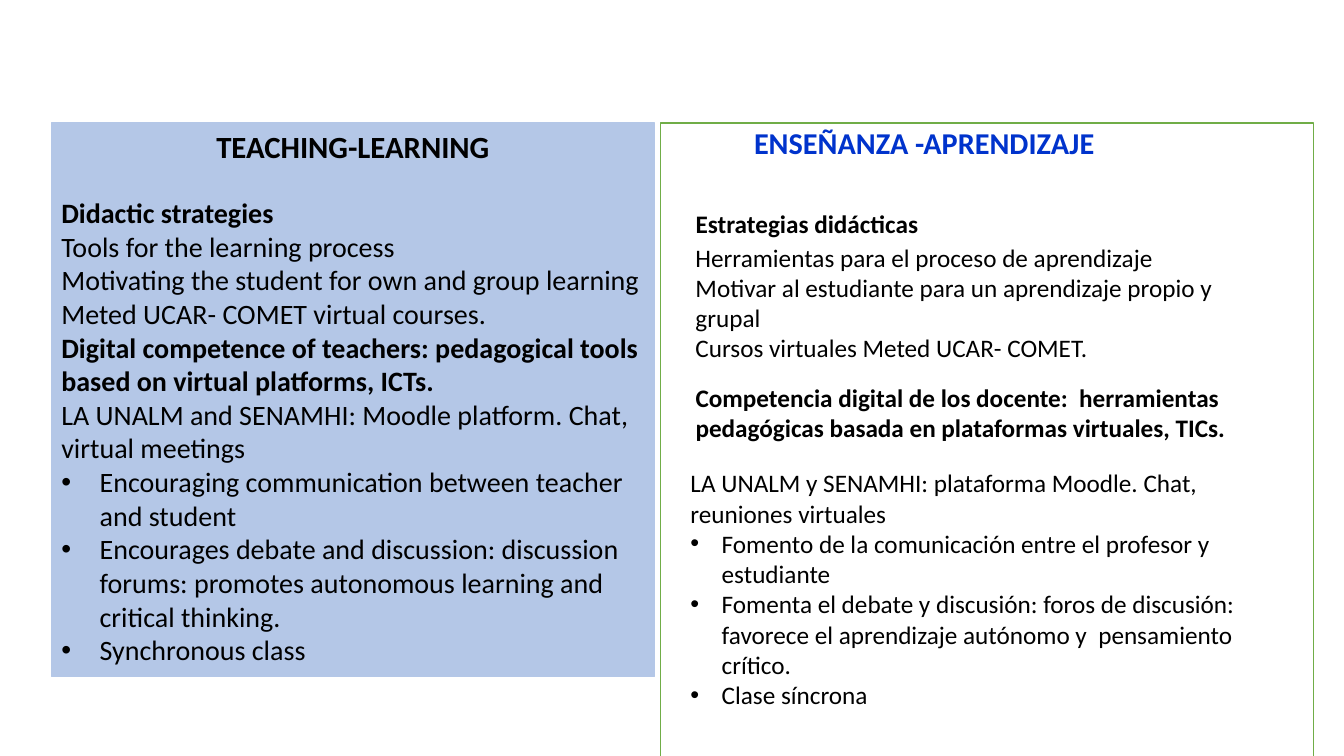
from dataclasses import dataclass

from lxml import etree
from pptx import Presentation
from pptx.dml.color import RGBColor
from pptx.enum.shapes import MSO_SHAPE
from pptx.enum.text import MSO_ANCHOR, PP_ALIGN
from pptx.oxml.ns import qn
from pptx.util import Inches, Pt

RECT = MSO_SHAPE.RECTANGLE
TOP = MSO_ANCHOR.TOP
LEFT = PP_ALIGN.LEFT
CENTER = PP_ALIGN.CENTER


@dataclass(frozen=True)
class Theme:
    font: str = "Calibri"
    ink: str = "000000"
    title: str = "0033CC"
    white: str = "FFFFFF"
    green: str = "70AD47"
    blue: str = "B4C7E7"
    title_size: float = 21.6
    head_size: float = 22
    left_size: float = 20
    right_size: float = 18


THEME = Theme()


def color(code):
    return RGBColor.from_string(code)


def add_panel(slide, box, fill, line, width):
    panel = slide.shapes.add_shape(RECT, *map(Inches, box))
    panel.shadow.inherit = False
    panel.fill.solid()
    panel.fill.fore_color.rgb = color(fill)
    panel.line.color.rgb = color(line)
    panel.line.width = Pt(width)
    return panel


def add_box(slide, box):
    return slide.shapes.add_textbox(*map(Inches, box))


def add_bullet(para, indent):
    props = para._p.get_or_add_pPr()
    props.set("marL", str(Inches(indent)))
    props.set("indent", str(-Inches(indent)))
    etree.SubElement(props, qn("a:buFont")).set("typeface", "Arial")
    etree.SubElement(props, qn("a:buChar")).set("char", "•")


def write(shape, text, size=THEME.right_size, ink=THEME.ink, bold=False,
          align=LEFT, indent=0, after=0, spacing=1.0):
    frame = shape.text_frame
    frame.word_wrap = True
    frame.vertical_anchor = TOP
    first = frame.paragraphs[0]
    para = frame.add_paragraph() if first.runs else first
    para.alignment = align
    para.line_spacing = spacing
    para.space_after = Pt(after)
    if indent:
        add_bullet(para, indent)
    run = para.add_run()
    run.text = text
    run.font.name = THEME.font
    run.font.size = Pt(size)
    run.font.bold = bold
    run.font.color.rgb = color(ink)


def write_all(shape, lines, **form):
    for line in lines:
        write(shape, line, **form)


def add_english(slide):
    panel = add_panel(slide, (0.51, 1.22, 5.98, 5.49),
                      THEME.blue, THEME.blue, 0.75)
    size = THEME.left_size
    write(panel, "TEACHING-LEARNING", size=THEME.head_size, bold=True,
          align=CENTER, after=22)
    write(panel, "Didactic strategies", size=size, bold=True)
    write_all(panel, (
        "Tools for the learning process",
        "Motivating the student for own and group learning",
        "Meted UCAR- COMET virtual courses.",
    ), size=size)
    write(panel, "Digital competence of teachers: pedagogical tools based on "
          "virtual platforms, ICTs.", size=size, bold=True)
    write(panel, "LA UNALM and SENAMHI: Moodle platform. Chat, "
          "virtual meetings", size=size)
    write_all(panel, (
        "Encouraging communication between teacher and student",
        "Encourages debate and discussion: discussion forums: promotes "
        "autonomous learning and critical thinking.",
        "Synchronous class",
    ), size=size, indent=0.38)


def add_spanish(slide):
    add_panel(slide, (6.55, 1.22, 6.48, 6.34), THEME.white, THEME.green, 1)
    title = add_box(slide, (7.38, 1.22, 4.09, 0.71))
    write(title, "ENSEÑANZA -APRENDIZAJE", size=THEME.title_size,
          ink=THEME.title, bold=True, spacing=0.9)
    tools = add_box(slide, (6.8, 2.35, 5.96, 1.62))
    write_all(tools, (
        "Herramientas para el proceso de aprendizaje",
        "Motivar al estudiante para un aprendizaje propio y grupal",
        "Cursos virtuales Meted UCAR- COMET.",
    ))
    class_box = add_box(slide, (6.75, 4.59, 6.22, 2.52))
    write(class_box, "LA UNALM y SENAMHI: plataforma Moodle. Chat, "
          "reuniones virtuales")
    write_all(class_box, (
        "Fomento de la comunicación entre el profesor y estudiante",
        "Fomenta el debate y discusión: foros de discusión: favorece el "
        "aprendizaje autónomo y  pensamiento crítico.",
        "Clase síncrona",
    ), indent=0.31)
    head = add_box(slide, (6.8, 2.02, 4.21, 0.4))
    write(head, "Estrategias didácticas", bold=True)
    skill = add_box(slide, (6.8, 3.74, 5.85, 1.01))
    write(skill, "Competencia digital de los docente:  herramientas "
          "pedagógicas basada en plataformas virtuales, TICs.", bold=True)


def main():
    deck = Presentation()
    deck.slide_width = Inches(13.33)
    deck.slide_height = Inches(7.5)
    slide = deck.slides.add_slide(deck.slide_layouts[6])
    add_spanish(slide)
    add_english(slide)
    deck.save("out.pptx")


if __name__ == "__main__":
    main()
